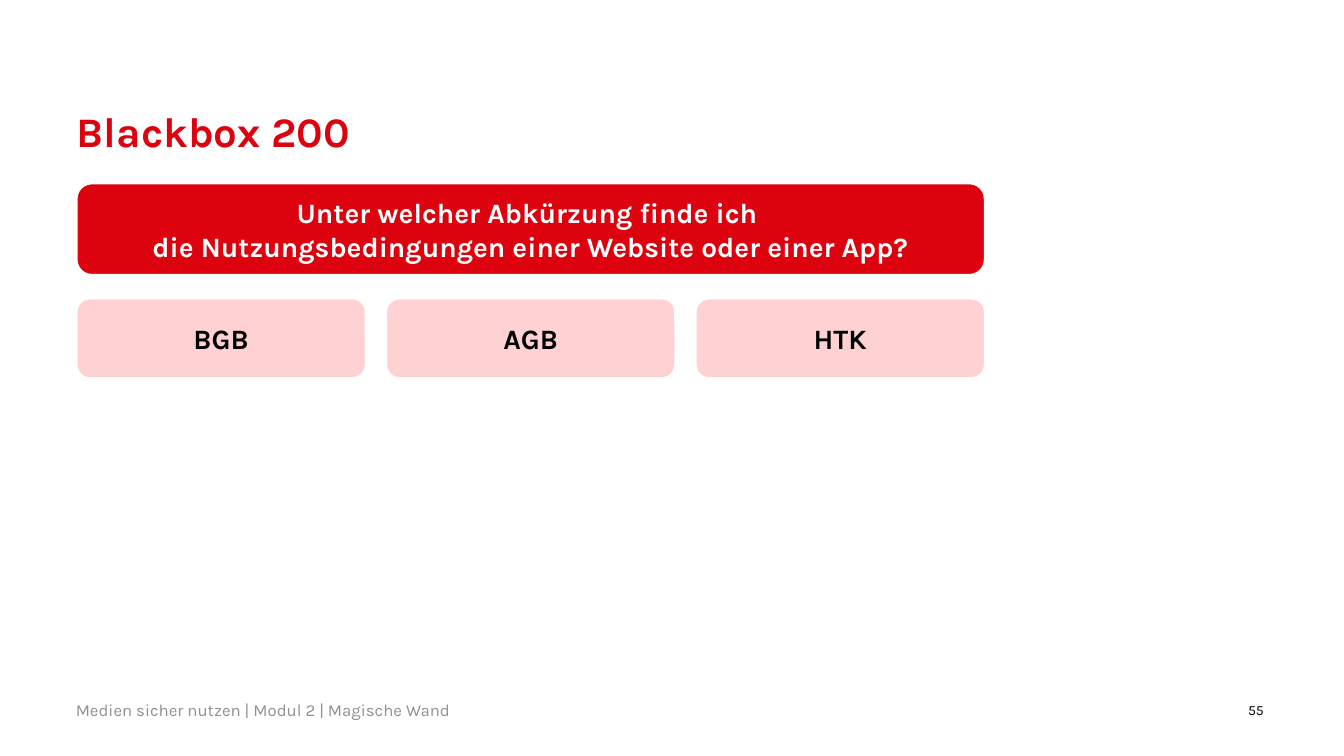
from lxml import etree
from pptx import Presentation
from pptx.dml.color import RGBColor
from pptx.enum import shapes, text
from pptx.oxml.ns import qn
from pptx.util import Cm, Pt

RED, PINK, WHITE, BLACK, GREY = "DC020E", "FEC6C9", "FFFFFF", "000000", "909090"
LEFT = 1.93


def write(shape, content, size, color, bold=False, align=text.PP_ALIGN.LEFT):
    frame = shape.text_frame
    frame.word_wrap = True
    frame.vertical_anchor = text.MSO_ANCHOR.MIDDLE
    frame.text = content
    paragraph = frame.paragraphs[0]
    paragraph.alignment = align
    for run in paragraph.runs:
        run.font.name = "Karla"
        run.font.size = Pt(size)
        run.font.bold = bold
        run.font.color.rgb = RGBColor.from_string(color)


def add_card(left, top, width, height, fill, content, color):
    card = slide.shapes.add_shape(
        shapes.MSO_SHAPE.ROUNDED_RECTANGLE, Cm(left), Cm(top), Cm(width), Cm(height))
    card.shadow.inherit = False
    card.fill.solid()
    card.fill.fore_color.rgb = RGBColor.from_string(fill)
    card.line.color.rgb = RGBColor.from_string(WHITE)
    card.line.width = Pt(1.5)
    write(card, content, 20, color, True, text.PP_ALIGN.CENTER)
    return card


presentation = Presentation()
presentation.slide_width, presentation.slide_height = Cm(33.87), Cm(19.05)
slide = presentation.slides.add_slide(presentation.slide_layouts[6])

# Title, footer and page number
labels = [
    (LEFT, 2.82, 30, 1.09, "Blackbox 200", 30, RED, True, text.PP_ALIGN.LEFT),
    (1.91, 17.68, 25, 0.41, "Medien sicher nutzen | Modul 2 | Magische Wand",
     12, GREY, False, text.PP_ALIGN.LEFT),
    (30.07, 17.68, 1.78, 0.41, "55", 10, BLACK, False, text.PP_ALIGN.RIGHT),
]
for left, top, width, height, *style in labels:
    box = slide.shapes.add_textbox(Cm(left), Cm(top), Cm(width), Cm(height))
    frame = box.text_frame
    frame.margin_left = frame.margin_right = frame.margin_top = frame.margin_bottom = 0
    write(box, *style)
slide.shapes[0].text_frame.paragraphs[0].line_spacing = 0.9

# Question
question = "Unter welcher Abkürzung finde ich \vdie Nutzungsbedingungen einer Website oder einer App?"
add_card(LEFT, 4.62, 22.89, 2.31, RED, question, WHITE)

# Answers, in 80 % opaque pink
for column, answer in enumerate(["BGB", "AGB", "HTK"]):
    card = add_card(LEFT + column * 7.8, 7.52, 7.29, 2.01, PINK, answer, BLACK)
    fill_color = card.fill._xPr.find(qn("a:solidFill"))[0]
    etree.SubElement(fill_color, qn("a:alpha"), val="80000")

presentation.save("out.pptx")
